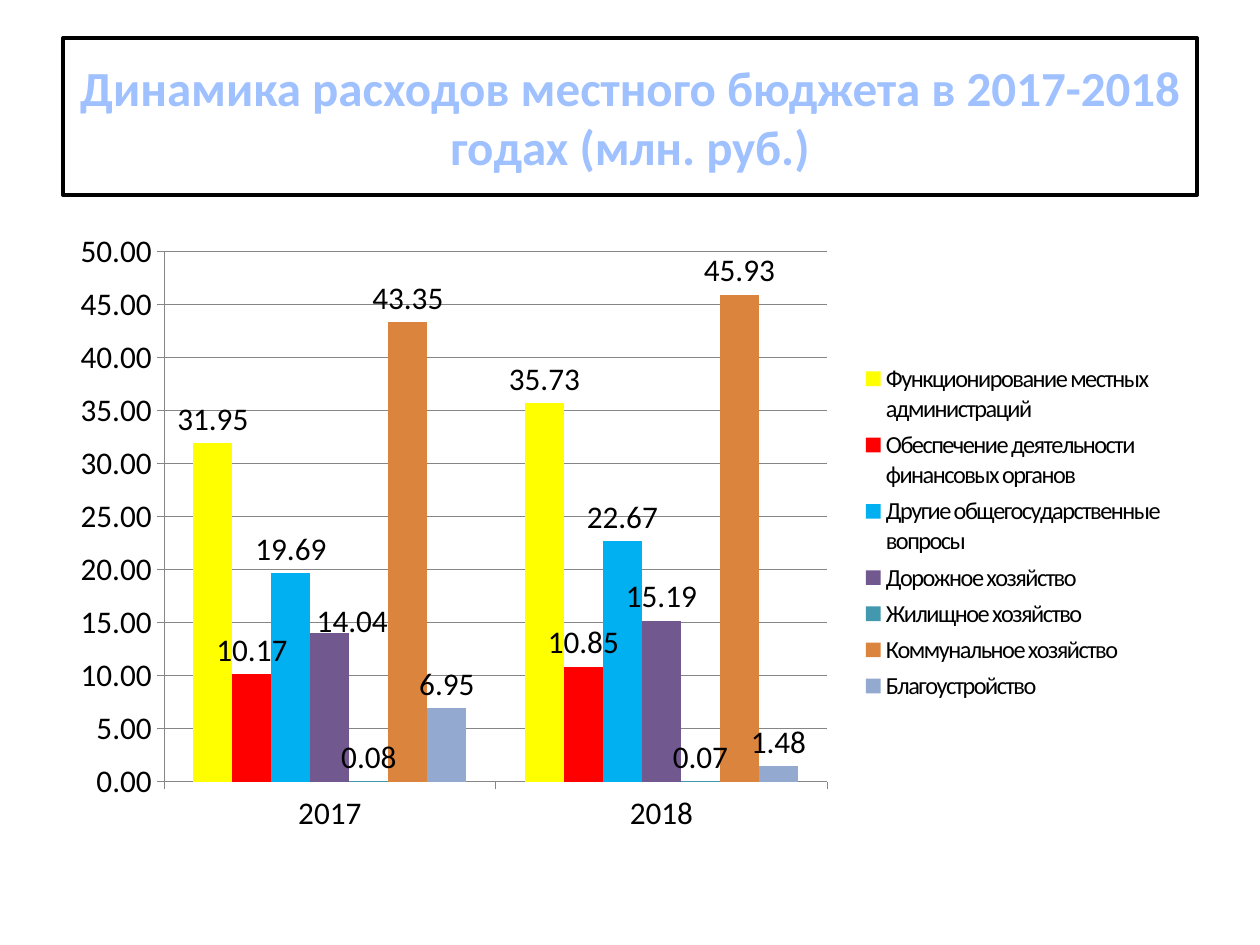
import pptx
import pptx.chart.data
import pptx.dml.color
import pptx.enum.chart
import pptx.enum.text
import pptx.oxml
import pptx.oxml.ns
import pptx.util
from dataclasses import dataclass

Inches = pptx.util.Inches
Pt = pptx.util.Pt
RGB = pptx.dml.color.RGBColor.from_string
Enum = pptx.enum.chart


@dataclass(frozen=True)
class Theme:
    font: str = "Calibri"
    ink: str = "000000"
    paper: str = "FFFFFF"
    title: str = "A0C1FF"
    grid: str = "868686"
    head: int = 28
    body: int = 18
    key: int = 14


THEME = Theme()
FORMAT = "#,##0.00"
YEARS = ["2017", "2018"]
COSTS = [
    ("Функционирование местных администраций", (31.95, 35.73), "FFFF00"),
    ("Обеспечение деятельности финансовых органов", (10.17, 10.85), "FF0000"),
    ("Другие общегосударственные вопросы", (19.69, 22.67), "00B0F0"),
    ("Дорожное хозяйство", (14.04, 15.19), "71588F"),
    ("Жилищное хозяйство", (0.08, 0.07), "4198AF"),
    ("Коммунальное хозяйство", (43.35, 45.93), "DB843D"),
    ("Благоустройство", (6.95, 1.48), "93A9CF"),
]
ROADS = 3


def style(font, size, color):
    font.name = THEME.font
    font.size = Pt(size)
    font.color.rgb = RGB(color)


def layout(**parts):
    """Return a manual chart layout; lengths are fractions of the chart."""
    tags = "".join(f'<c:{tag} val="{val}"/>' for tag, val in parts.items())
    space = pptx.oxml.ns.nsdecls("c")
    return pptx.oxml.parse_xml(
        f"<c:layout {space}><c:manualLayout>{tags}</c:manualLayout></c:layout>")


def place(item, after, new):
    """Put a layout behind the named child, in place of any old one."""
    for old in item.xpath("c:layout"):
        item.remove(old)
    if after:
        item.xpath(after)[0].addnext(new)
    else:
        item.insert(0, new)


def add_title(slide, left, top, width, height):
    box = slide.shapes.title
    box.left, box.top, box.width, box.height = left, top, width, height
    box.fill.solid()
    box.fill.fore_color.rgb = RGB(THEME.paper)
    box.line.color.rgb = RGB(THEME.ink)
    box.line.width = Pt(2)
    frame = box.text_frame
    frame.text = "Динамика расходов местного бюджета в 2017-2018 годах (млн. руб.)"
    frame.auto_size = pptx.enum.text.MSO_AUTO_SIZE.NONE
    frame.vertical_anchor = pptx.enum.text.MSO_ANCHOR.MIDDLE
    line = frame.paragraphs[0]
    line.alignment = pptx.enum.text.PP_ALIGN.CENTER
    font = line.runs[0].font
    style(font, THEME.head, THEME.title)
    font.bold = True


def format_axes(chart):
    axis = chart.value_axis
    axis.minimum_scale, axis.maximum_scale, axis.major_unit = 0, 50, 5
    axis.tick_labels.number_format = FORMAT
    axis.tick_labels.number_format_is_linked = False
    axis.has_major_gridlines = True
    for part in (axis, chart.category_axis, axis.major_gridlines):
        part.format.line.color.rgb = RGB(THEME.grid)
        part.format.line.width = Pt(0.75)
    for part in (axis, chart.category_axis):
        part.major_tick_mark = Enum.XL_TICK_MARK.OUTSIDE


def format_bars(plot):
    plot.gap_width, plot.overlap = 150, 0
    plot.vary_by_categories = False
    for bars, (_, _, color) in zip(plot.series, COSTS):
        bars.format.fill.solid()
        bars.format.fill.fore_color.rgb = RGB(color)
        bars.invert_if_negative = False
        tags = bars.data_labels
        tags.show_value = True
        tags.number_format = FORMAT
        tags.number_format_is_linked = False
        tags.position = Enum.XL_LABEL_POSITION.OUTSIDE_END
    # The first road label moves aside from its neighbours.
    roads = plot.series[ROADS]
    roads.points[0].data_label.position = Enum.XL_LABEL_POSITION.OUTSIDE_END
    tag = roads.data_labels._element.xpath("c:dLbl")[0]
    place(tag, "c:idx", layout(x=0.02, y=0.02))


def format_legend(chart):
    chart.has_legend = True
    legend = chart.legend
    legend.position = Enum.XL_LEGEND_POSITION.RIGHT
    legend.include_in_layout = False
    style(legend.font, THEME.key, THEME.ink)
    node = legend._element
    node.xpath(".//a:defRPr")[0].set("spc", "-100")
    place(node, "c:legendPos", layout(
        xMode="edge", yMode="edge", x=0.7, y=0.22, w=0.29, h=0.56))


def add_costs(slide, left, top, width, height):
    data = pptx.chart.data.CategoryChartData(number_format=FORMAT)
    data.categories = YEARS
    for name, values, _ in COSTS:
        data.add_series(name, values)
    chart = slide.shapes.add_chart(
        Enum.XL_CHART_TYPE.COLUMN_CLUSTERED, left, top, width, height, data).chart
    chart.has_title = False
    style(chart.font, THEME.body, THEME.ink)
    format_axes(chart)
    format_bars(chart.plots[0])
    format_legend(chart)
    area = chart._chartSpace.xpath("c:chart/c:plotArea")[0]
    place(area, None, layout(
        layoutTarget="inner", xMode="edge", yMode="edge",
        x=0.09, y=0.05, w=0.59, h=0.85))


def main():
    deck = pptx.Presentation()
    deck.slide_width, deck.slide_height = Inches(10), Inches(7.5)
    slide = deck.slides.add_slide(deck.slide_layouts[5])
    add_title(slide, Inches(0.5), Inches(0.3), Inches(9), Inches(1.25))
    add_costs(slide, Inches(0.5), Inches(1.75), Inches(9), Inches(4.95))
    deck.save("out.pptx")


if __name__ == "__main__":
    main()
